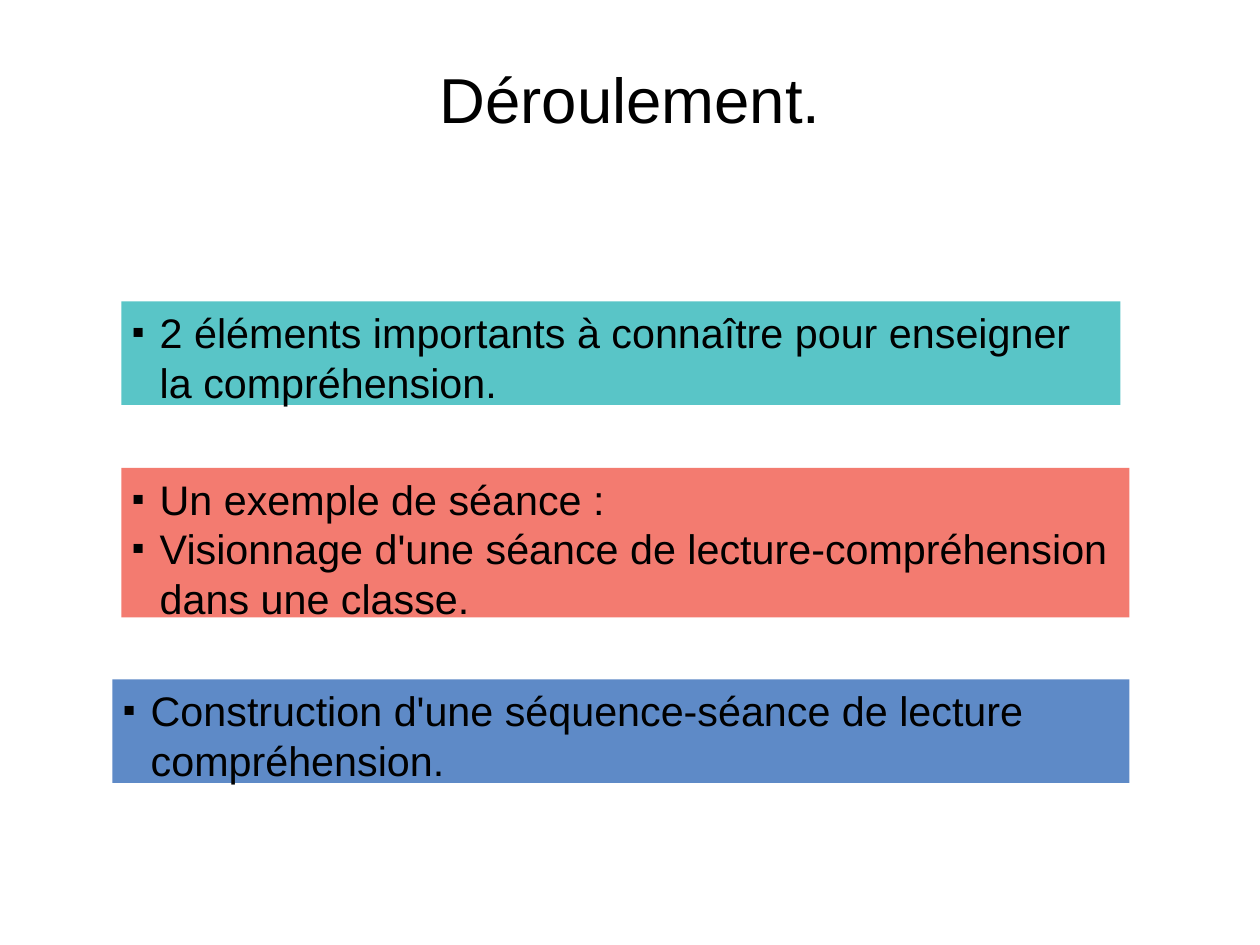
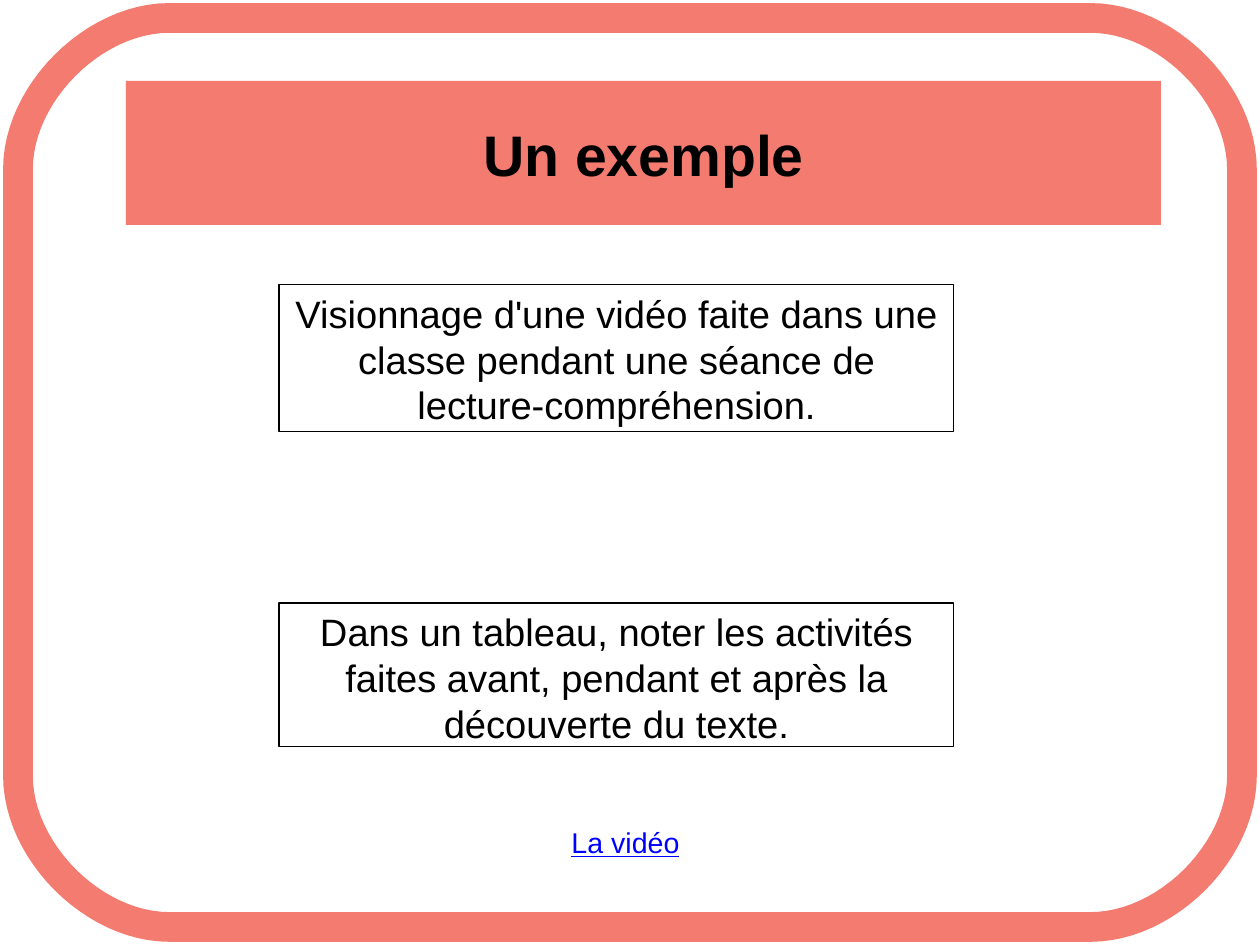
from lxml.etree import SubElement
from pptx import Presentation
from pptx.dml.color import RGBColor
from pptx.enum.shapes import MSO_SHAPE
from pptx.enum.text import MSO_ANCHOR, PP_ALIGN
from pptx.oxml.ns import qn
from pptx.util import Cm, Pt

BLACK, TEAL, CORAL, BLUE, LINK = "000000", "59C5C7", "F37B70", "5E8AC7", "0000FF"


def colour(value):
    return RGBColor.from_string(value)


def curve(start, first, second, end, steps=24):
    points = []
    for step in range(1, steps + 1):
        t = step / steps
        weights = ((1 - t) ** 3, 3 * t * (1 - t) ** 2, 3 * t * t * (1 - t), t ** 3)
        points.append(tuple(
            sum(weight * value for weight, value in zip(weights, axis))
            for axis in zip(start, first, second, end)))
    return points


class Slides:
    font = "Arial"
    blank = 6
    bullet_indent = Cm(0.6)

    def __init__(self, width, height):
        self.deck = Presentation()
        self.deck.slide_width, self.deck.slide_height = Cm(width), Cm(height)
        self.page = None

    def new_page(self):
        self.page = self.deck.slides.add_slide(self.deck.slide_layouts[self.blank])

    def fill_text(self, box, lines, size, ink=BLACK, bold=False, underline=False,
                  bullets=False, top=0.13):
        frame = box.text_frame
        frame.word_wrap = True
        frame.vertical_anchor = MSO_ANCHOR.TOP
        frame.margin_left = frame.margin_right = Cm(0.25)
        frame.margin_top, frame.margin_bottom = Cm(top), Cm(0.13)
        for index, line in enumerate(lines):
            para = frame.add_paragraph() if index else frame.paragraphs[0]
            para.alignment = PP_ALIGN.LEFT if bullets else PP_ALIGN.CENTER
            if bullets:
                self.bullet(para)
            span = para.add_run()
            span.text = line
            span.font.name, span.font.size = self.font, Pt(size)
            span.font.bold, span.font.underline = bold, underline
            span.font.color.rgb = colour(ink)

    def bullet(self, para):
        properties = para._p.get_or_add_pPr()
        properties.set("marL", str(int(self.bullet_indent)))
        properties.set("indent", str(-int(self.bullet_indent)))
        tint = SubElement(properties, qn("a:buClr"))
        SubElement(tint, qn("a:srgbClr"), val=BLACK)
        SubElement(properties, qn("a:buSzPct"), val="45000")
        SubElement(properties, qn("a:buFont"), typeface=self.font)
        SubElement(properties, qn("a:buChar"), char="■")

    def text(self, place, line, size, **style):
        box = self.page.shapes.add_textbox(*map(Cm, place))
        self.fill_text(box, [line], size, **style)

    def panel(self, place, lines, size, fill=None, **style):
        box = self.page.shapes.add_shape(MSO_SHAPE.RECTANGLE, *map(Cm, place))
        box.shadow.inherit = False
        if fill:
            box.fill.solid()
            box.fill.fore_color.rgb = colour(fill)
            box.line.fill.background()
        else:
            box.fill.background()
            box.line.color.rgb = colour(BLACK)
            box.line.width = Pt(0.75)
        self.fill_text(box, lines, size, **style)

    def border(self, left, top, right, bottom, radius, tint, weight):
        corners = (
            ((left, top), (1, 0), (0, 1)),
            ((left, bottom), (0, -1), (1, 0)),
            ((right, bottom), (-1, 0), (0, -1)),
            ((right, top), (0, 1), (-1, 0)),
        )
        points = []
        for corner, entry, leave in corners:
            start, first, second, end = (
                tuple(c + d * reach for c, d in zip(corner, direction))
                for direction, reach in ((entry, radius), (entry, radius / 2),
                                         (leave, radius / 2), (leave, radius)))
            points += [start] + curve(start, first, second, end)
        points = [(Cm(x), Cm(y)) for x, y in points]
        builder = self.page.shapes.build_freeform(*points[0])
        builder.add_line_segments(points[1:], close=True)
        outline = builder.convert_to_shape()
        outline.shadow.inherit = False
        outline.fill.background()
        outline.line.color.rgb = colour(tint)
        outline.line.width = Pt(weight)


def main():
    slides = Slides(28, 21)

    slides.new_page()
    steps = (
        ((2.7, 6.7, 22.2, 2.3), TEAL,
         ["2 éléments importants à connaître pour enseigner la compréhension."]),
        ((2.7, 10.4, 22.4, 3.32), CORAL,
         ["Un exemple de séance :",
          "Visionnage d'une séance de lecture-compréhension dans une classe."]),
        ((2.5, 15.1, 22.6, 2.3), BLUE,
         ["Construction d'une séquence-séance de lecture compréhension."]),
    )
    for place, fill, lines in steps:
        slides.panel(place, lines, 26, fill=fill, bullets=True)
    slides.text((6.4, 1.2, 15.2, 1.83), "Déroulement.", 40)

    slides.new_page()
    slides.border(0.4, 0.4, 27.6, 20.6, 3.36, CORAL, 18.71)
    slides.panel((2.8, 1.8, 23, 3.2), ["Un exemple"], 36, fill=CORAL, bold=True, top=0.86)
    tasks = (
        (6.32, 3.28, "Visionnage d'une vidéo faite dans une classe pendant "
                     "une séance de lecture-compréhension."),
        (13.4, 3.2, "Dans un tableau, noter les activités faites avant, "
                    "pendant et après la découverte du texte."),
    )
    for top, height, line in tasks:
        slides.panel((6.2, top, 15, height), [line], 24)
    slides.text((10.4, 18.2, 7, 0.97), "La vidéo", 18, ink=LINK, underline=True)

    slides.deck.save("out.pptx")


if __name__ == "__main__":
    main()
